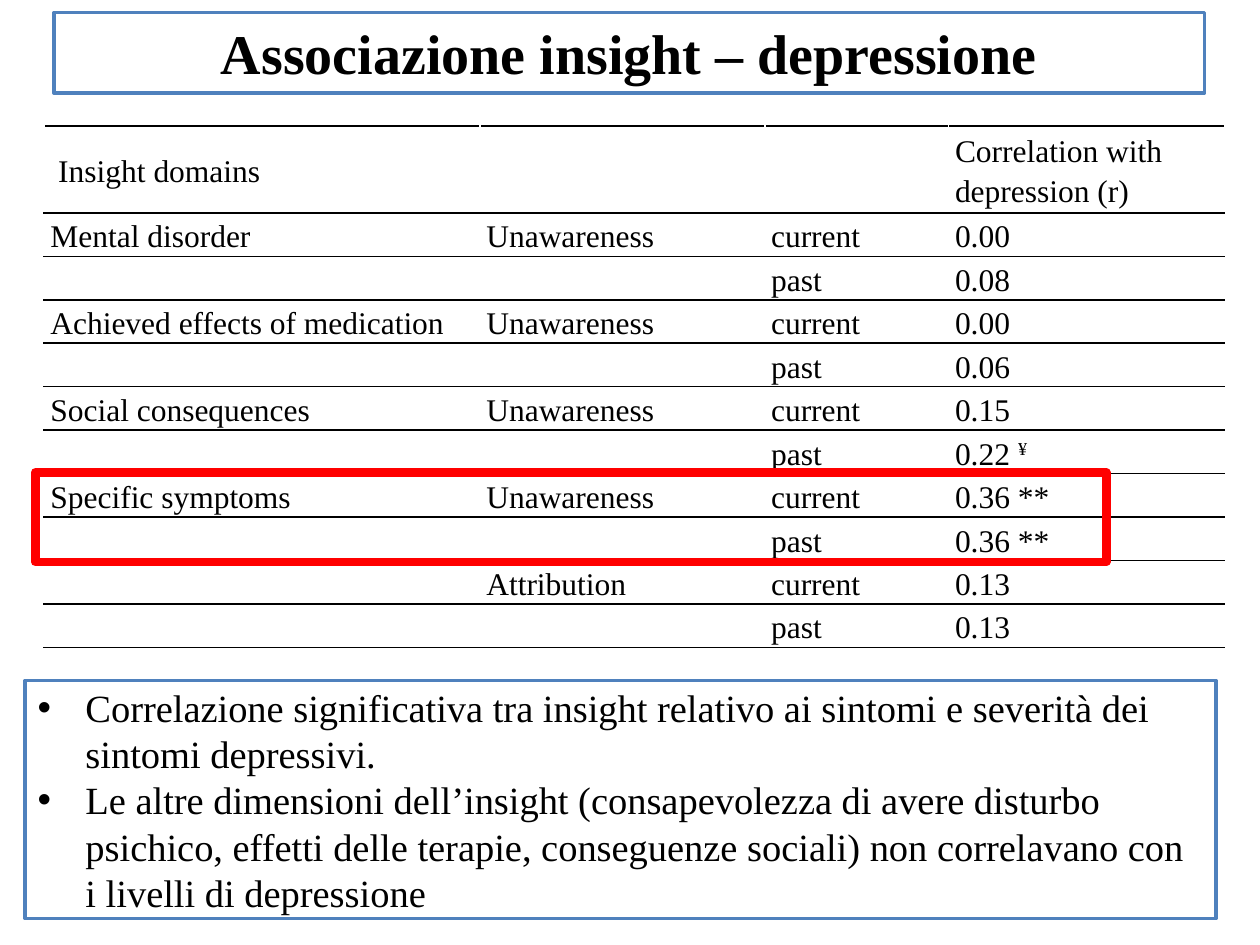
from lxml import etree
from pptx import Presentation
from pptx import util as u
from pptx.dml.color import RGBColor
from pptx.enum import shapes, text
from pptx.oxml import ns

deck = Presentation()
deck.slide_width, deck.slide_height = u.Inches(10), u.Inches(7.5)
col, row = deck.slide_width / 100, deck.slide_height / 100
slide = deck.slides.add_slide(deck.slide_layouts[6])
hue = RGBColor.from_string


def write(para, words, size, bold=False):
    run = para.add_run()
    run.text = words
    run.font.name = "Times New Roman"
    run.font.size = u.Pt(size)
    run.font.bold = bold
    run.font.color.rgb = hue("000000")
    return run


def frame(x, y, wide, high, line, weight, fill=None):
    box = slide.shapes.add_shape(
        shapes.MSO_SHAPE.RECTANGLE, int(x * col), int(y * row), int(wide * col), int(high * row))
    box.shadow.inherit = False
    if fill:
        box.fill.solid()
        box.fill.fore_color.rgb = hue(fill)
    else:
        box.fill.background()
    box.line.color.rgb = hue(line)
    box.line.width = u.Pt(weight)
    box.text_frame.word_wrap = True
    return box.text_frame


rows = [
    (" Insight domains", "", "", "Correlation with depression (r)"),
    ("Mental disorder", "Unawareness", "current", "0.00"),
    ("", "", "past", "0.08"),
    ("Achieved effects of medication", "Unawareness", "current", "0.00"),
    ("", "", "past", "0.06"),
    ("Social consequences", "Unawareness", "current", "0.15"),
    ("", "", "past", "0.22 ¥"),
    ("Specific symptoms", "Unawareness", "current", "0.36 **"),
    ("", "", "past", "0.36 **"),
    ("", "Attribution", "current", "0.13"),
    ("", "", "past", "0.13"),
]
widths = [34.6, 22.6, 14.6, 21.9]
step = 4.6
grid = slide.shapes.add_table(
    len(rows), len(widths), int(3.5 * col), int(13.33 * row),
    int(sum(widths) * col), int((len(rows) + 1) * step * row)).table
grid.first_row = grid.horz_banding = False
for i, wide in enumerate(widths):
    grid.columns[i].width = int(wide * col)
for r, cells in enumerate(rows):
    grid.rows[r].height = int(step * row * (1 if r else 2))
    for c, words in enumerate(cells):
        cell = grid.cell(r, c)
        cell.margin_left = cell.margin_right = u.Inches(0.05)
        cell.margin_top = cell.margin_bottom = 0
        cell.vertical_anchor = text.MSO_ANCHOR.MIDDLE
        cell.fill.solid()
        cell.fill.fore_color.rgb = hue("FFFFFF")
        props = cell._tc.get_or_add_tcPr()
        for i, side in enumerate(("lnT", "lnB")):
            edge = etree.Element(ns.qn("a:" + side), w=str(u.Pt(1)))
            paint = etree.SubElement(edge, ns.qn("a:solidFill"))
            etree.SubElement(paint, ns.qn("a:srgbClr"), val="000000")
            props.insert(i, edge)
        if words:
            para = cell.text_frame.paragraphs[0]
            para.line_spacing = 1.15
            write(para, words.rstrip("¥"), 18)
            if words.endswith("¥"):
                mark = write(para, "¥", 18)
                mark.font._element.set("baseline", "30000")

frame(2.8, 50, 85, 9.47, "FF0000", 5)

title = frame(4.3, 1.33, 91.3, 8.53, "4F81BD", 2, "FFFFFF")
title.vertical_anchor = text.MSO_ANCHOR.TOP
title.paragraphs[0].alignment = text.PP_ALIGN.CENTER
write(title.paragraphs[0], "Associazione insight – depressione", 32, True)

notes = [
    "Correlazione significativa tra insight relativo ai sintomi e severità dei sintomi depressivi.",
    "Le altre dimensioni dell’insight (consapevolezza di avere disturbo psichico, effetti delle "
    "terapie, conseguenze sociali) non correlavano con i livelli di depressione",
]
body = frame(2, 72, 94.5, 25.2, "4F81BD", 2, "FFFFFF")
body.vertical_anchor = text.MSO_ANCHOR.MIDDLE
for i, words in enumerate(notes):
    para = body.add_paragraph() if i else body.paragraphs[0]
    para.alignment = text.PP_ALIGN.LEFT
    props = para._p.get_or_add_pPr()
    props.set("marL", str(u.Inches(0.38)))
    props.set("indent", str(-u.Inches(0.38)))
    etree.SubElement(props, ns.qn("a:buFont"), typeface="Arial")
    etree.SubElement(props, ns.qn("a:buChar"), char="•")
    write(para, words, 22)

deck.save("out.pptx")
